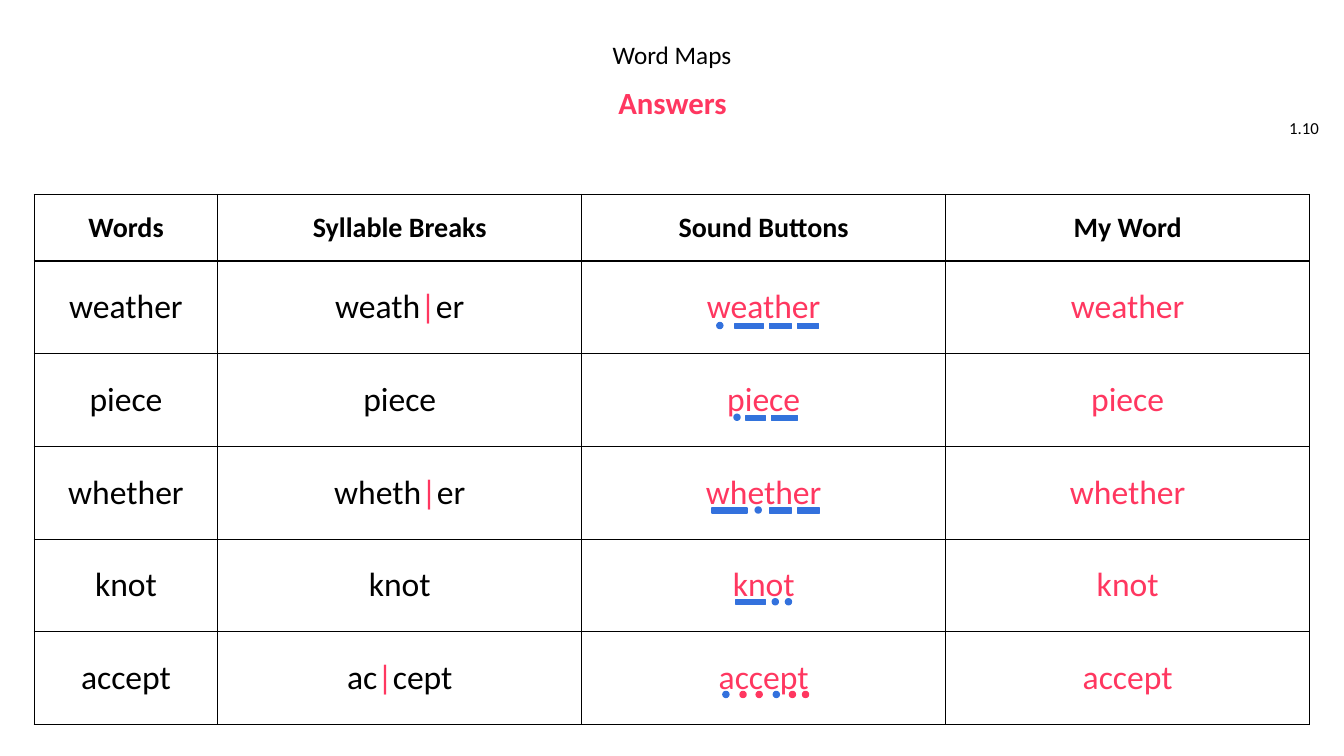
from pptx import Presentation
from pptx.dml.color import RGBColor
from pptx.enum.shapes import MSO_SHAPE as Kind
from pptx.enum.text import MSO_ANCHOR as Anchor, PP_ALIGN as Align
from pptx.oxml import parse_xml
from pptx.oxml.ns import nsdecls
from pptx.util import Pt

PX = 9144
BLACK, PINK, BLUE, SKY = "000000", "FF3760", "3371DD", "3273DC"


def hue(code):
    return RGBColor.from_string(code)


def style(para, size, color, bold=False, align=Align.CENTER):
    para.alignment = align
    font = para.font
    font.name, font.size, font.bold = "Calibri", Pt(size), bold
    font.color.rgb = hue(color)


deck = Presentation()
deck.slide_width, deck.slide_height = 1333 * PX, 750 * PX
slide = deck.slides.add_slide(deck.slide_layouts[6])
shapes = slide.shapes

titles = [
    ("1.10", (1255, 107, 63, 40), 12, BLACK, False, Align.RIGHT, Anchor.MIDDLE, 1),
    ("Word Maps", (382, 37, 569, 35), 18, BLACK, False, Align.CENTER, Anchor.TOP, 0.9),
    ("Answers", (209, 84, 916, 40), 22, PINK, True, Align.CENTER, Anchor.MIDDLE, 0.9),
]
for text, area, size, color, bold, align, anchor, lead in titles:
    frame = shapes.add_textbox(*(n * PX for n in area)).text_frame
    frame.word_wrap = True
    frame.vertical_anchor = anchor
    para = frame.paragraphs[0]
    para.text = text
    para.line_spacing = lead
    style(para, size, color, bold, align)

heads = ["Words", "Syllable Breaks", "Sound Buttons", "My Word"]
breaks = ["weath|er", "piece", "wheth|er", "knot", "ac|cept"]
rows = [heads]
for split in breaks:
    word = split.replace("|", "")
    rows.append([word, split, word, word])

table = shapes.add_table(6, 4, 34 * PX, 193 * PX, 1265 * PX, 526 * PX).table
table.first_row = table.horz_banding = False
for col, width in zip(table.columns, [182, 361, 361, 361]):
    col.width = width * PX
for row, height in zip(table.rows, [66] + [92] * 5):
    row.height = height * PX

for r, row in enumerate(rows):
    for c, text in enumerate(row):
        cell = table.cell(r, c)
        cell.vertical_anchor = Anchor.MIDDLE
        para = cell.text_frame.paragraphs[0]
        start, bar, end = text.partition("|")
        for part in filter(None, (start, bar, end)):
            run = para.add_run()
            run.text = part
            if part == "|":
                run.font.color.rgb = hue(PINK)
        if r == 0:
            style(para, 20, BLACK, True)
        else:
            style(para, 24, PINK if c > 1 else BLACK)
        props = cell._tc.get_or_add_tcPr()
        for side in "LRTB":
            props.append(parse_xml(
                f'<a:ln{side} {nsdecls("a")} w="12700"><a:solidFill>'
                f'<a:srgbClr val="{BLACK}"/></a:solidFill></a:ln{side}>'))
        cell.fill.solid()
        cell.fill.fore_color.rgb = hue("FFFFFF")

DOT = 6
marks = [
    (320, BLUE, [(711, DOT), (729, 28), (763, 22), (791, 21)]),
    (411, SKY, [(728, DOT), (740, 19), (765, 26)]),
    (503, BLUE, [(706, 35), (749, DOT), (763, 22), (791, 22)]),
    (594, BLUE, [(730, 29), (766, DOT), (779, DOT)]),
    (686, BLUE, [(717, DOT), (767, DOT)]),
    (686, PINK, [(734, DOT), (750, DOT), (783, DOT), (796, DOT)]),
]
for top, color, items in marks:
    group = shapes.add_group_shape()
    for left, width in items:
        if width == DOT:
            kind, y, height = Kind.OVAL, top, DOT
        else:
            kind, y, height = Kind.RECTANGLE, top + 1, 5
        mark = group.shapes.add_shape(kind, left * PX, y * PX, width * PX, height * PX)
        mark.shadow.inherit = False
        mark.fill.solid()
        mark.fill.fore_color.rgb = hue(color)
        mark.line.color.rgb = hue(color)
        mark.line.width = Pt(1)

deck.save("out.pptx")
